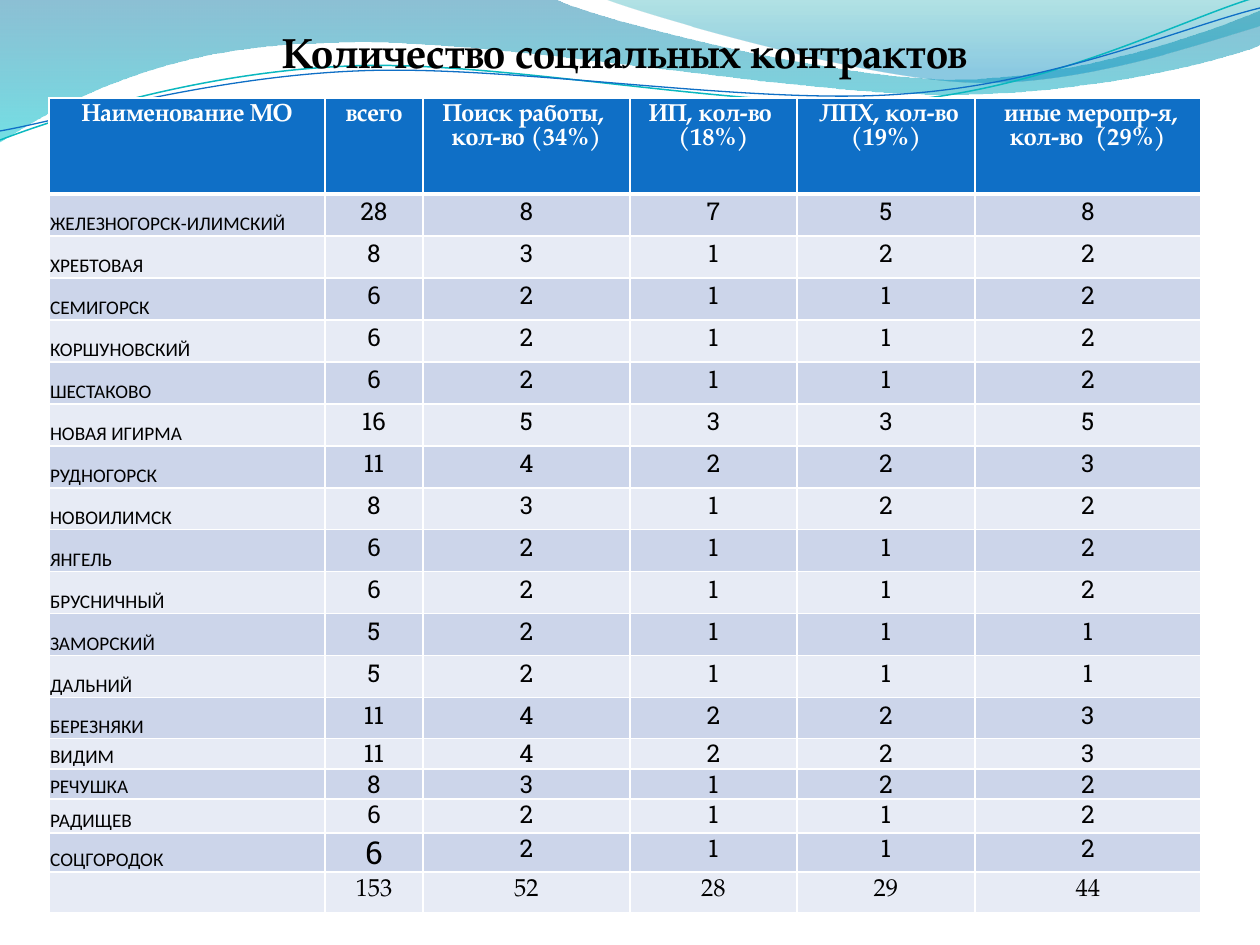
from dataclasses import dataclass, replace

from lxml import etree
from pptx import Presentation
from pptx.dml.color import RGBColor
from pptx.enum.text import MSO_ANCHOR, PP_ALIGN
from pptx.oxml.ns import qn
from pptx.util import Pt

PX = 914400 // 126
TITLE_ONLY = 5
CENTER, LEFT = PP_ALIGN.CENTER, PP_ALIGN.LEFT
TOP, MIDDLE, BOTTOM = MSO_ANCHOR.TOP, MSO_ANCHOR.MIDDLE, MSO_ANCHOR.BOTTOM

SERIF, SLAB, SANS = "TeX Gyre Pagella", "Roboto Slab", "Calibri"
BLACK = RGBColor(0x00, 0x00, 0x00)
WHITE = RGBColor(0xFF, 0xFF, 0xFF)
BLUE = RGBColor(0x0F, 0x6F, 0xC6)
TEAL = RGBColor(0x0A, 0xB8, 0xBF)
BANDS = RGBColor(0xCC, 0xD5, 0xEA), RGBColor(0xE7, 0xEB, 0xF5)

Point = tuple[int, int]


@dataclass(frozen=True)
class Stop:
    position: float
    color: RGBColor
    opacity: int


@dataclass(frozen=True)
class Wave:
    """An outline of pieces: one point is a straight line, three are a Bezier curve."""
    start: Point
    pieces: list[list[Point]]
    stops: tuple[Stop, ...] = ()
    line_color: RGBColor | None = None
    line_width: float = 0


@dataclass(frozen=True)
class CellStyle:
    font: str
    size: int
    color: RGBColor = BLACK
    bold: bool = False
    align: PP_ALIGN = CENTER
    anchor: MSO_ANCHOR = TOP
    tight: bool = True
    spacing: float = 1.0


HEADER = CellStyle(SERIF, 14, WHITE, bold=True, tight=False)
NAME = CellStyle(SANS, 11, align=LEFT, anchor=BOTTOM)
NUMBER = CellStyle(SLAB, 14)
SHORT_ROW_NUMBER = replace(NUMBER, spacing=0.9)
LARGE_NUMBER = replace(SHORT_ROW_NUMBER, size=18)
TOTAL = CellStyle(SERIF, 14, tight=False, spacing=0.95)

WAVES = [
    Wave((0, 0), [[(554, -1)],
                  [(600, 21), (837, 79), (955, 79)],
                  [(1075, 79), (1207, 33), (1260, 11)],
                  [(1261, 45)],
                  [(1239, 55), (1096, 96), (940, 94)],
                  [(784, 94), (481, 35), (324, 43)],
                  [(163, 45), (58, 105), (-1, 142)]],
         (Stop(0, RGBColor(0x00, 0x74, 0xA1), 45), Stop(1, RGBColor(0x00, 0xC6, 0xCF), 55))),
    Wave((604, -1), [[(641, 14), (859, 78), (969, 82)],
                     [(1079, 87), (1211, 40), (1260, 26)],
                     [(1260, 0)]],
         (Stop(0, RGBColor(0x00, 0xA1, 0xA9), 30), Stop(0.8, RGBColor(0x00, 0x8B, 0xBF), 45))),
    Wave((0, 140), [[(60, 117), (199, 72), (349, 66)],
                    [(498, 59), (747, 112), (898, 101)],
                    [(1050, 89), (1182, 19), (1257, -3)]],
         line_color=TEAL, line_width=0.85),
    Wave((0, 131), [[(59, 121), (207, 77), (357, 71)],
                    [(508, 64), (752, 106), (903, 94)],
                    [(1053, 84), (1186, 26), (1260, 8)]],
         line_color=BLUE, line_width=0.75),
]

TITLE = "Количество социальных контрактов "
COLUMN_WIDTHS = [276, 98, 207, 167, 178, 226]
ROW_HEIGHTS = [96] + [42] * 12 + [41, 30, 30, 34, 39, 41]
FIRST_SHORT_ROW = 14
HEADINGS = ["Наименование МО", "всего", "Поиск работы,  кол-во (34%)",
            "ИП, кол-во  (18%)", " ЛПХ, кол-во (19%)", " иные меропр-я, кол-во  (29%)"]
CONTRACTS = [
    ("ЖЕЛЕЗНОГОРСК-ИЛИМСКИЙ", 28, 8, 7, 5, 8),
    ("ХРЕБТОВАЯ", 8, 3, 1, 2, 2),
    ("СЕМИГОРСК", 6, 2, 1, 1, 2),
    ("КОРШУНОВСКИЙ", 6, 2, 1, 1, 2),
    ("ШЕСТАКОВО", 6, 2, 1, 1, 2),
    ("НОВАЯ ИГИРМА", 16, 5, 3, 3, 5),
    ("РУДНОГОРСК", 11, 4, 2, 2, 3),
    ("НОВОИЛИМСК", 8, 3, 1, 2, 2),
    ("ЯНГЕЛЬ", 6, 2, 1, 1, 2),
    ("БРУСНИЧНЫЙ", 6, 2, 1, 1, 2),
    ("ЗАМОРСКИЙ", 5, 2, 1, 1, 1),
    ("ДАЛЬНИЙ", 5, 2, 1, 1, 1),
    ("БЕРЕЗНЯКИ", 11, 4, 2, 2, 3),
    ("ВИДИМ", 11, 4, 2, 2, 3),
    ("РЕЧУШКА", 8, 3, 1, 2, 2),
    ("РАДИЩЕВ", 6, 2, 1, 1, 2),
    ("СОЦГОРОДОК", 6, 2, 1, 1, 2),
    ("", 153, 52, 28, 29, 44),
]


def bend_segments(shape, pieces: list[list[Point]]) -> None:
    """Join the three line segments of each curved piece into one Bezier segment."""
    segments = iter(list(shape.element.iter(qn("a:lnTo"))))
    for piece in pieces:
        first, *others = [next(segments) for _ in piece]
        if others:
            first.tag = qn("a:cubicBezTo")
            for segment in others:
                first.append(segment[0])
                segment.getparent().remove(segment)


def draw_wave(slide, wave: Wave) -> None:
    builder = slide.shapes.build_freeform(wave.start[0] * PX, wave.start[1] * PX)
    builder.add_line_segments([(x * PX, y * PX) for piece in wave.pieces for x, y in piece],
                              close=bool(wave.stops))
    shape = builder.convert_to_shape()
    bend_segments(shape, wave.pieces)
    shape.shadow.inherit = False
    if wave.stops:
        shape.line.fill.background()
        shape.fill.gradient()
        shape.fill.gradient_angle = 270
        for gradient_stop, stop in zip(shape.fill.gradient_stops, wave.stops):
            gradient_stop.position = stop.position
            gradient_stop.color.rgb = stop.color
        for color, stop in zip(shape.element.iter(qn("a:srgbClr")), wave.stops):
            etree.SubElement(color, qn("a:alpha"), val=str(stop.opacity * 1000))
    else:
        shape.fill.background()
        shape.line.color.rgb = wave.line_color
        shape.line.width = Pt(wave.line_width)


def format_paragraph(paragraph, style: CellStyle) -> None:
    paragraph.alignment = style.align
    paragraph.line_spacing = style.spacing
    font = paragraph.font
    font.name, font.size, font.bold = style.font, Pt(style.size), style.bold
    font.color.rgb = style.color


def add_title(slide) -> None:
    title = slide.shapes.title
    slide.shapes.element.append(title.element)  # in front of the waves
    title.left, title.top, title.width, title.height = 59 * PX, 20 * PX, 1142 * PX, 63 * PX
    title.text_frame.text = TITLE
    title.text_frame.vertical_anchor = MIDDLE
    format_paragraph(title.text_frame.paragraphs[0], CellStyle(SERIF, 24, bold=True))


def set_borders(cell, widths: dict[str, int]) -> None:
    properties = cell._tc.get_or_add_tcPr()
    for index, (side, width) in enumerate(widths.items()):
        line = etree.Element(qn(f"a:ln{side}"), w=str(Pt(width)))
        fill = etree.SubElement(line, qn("a:solidFill"))
        etree.SubElement(fill, qn("a:srgbClr"), val=str(WHITE))
        properties.insert(index, line)


def fill_cell(cell, text: str, style: CellStyle, background: RGBColor) -> None:
    cell.text = text
    cell.vertical_anchor = style.anchor
    if style.tight:
        cell.margin_left = cell.margin_right = cell.margin_top = PX
        cell.margin_bottom = 0
    format_paragraph(cell.text_frame.paragraphs[0], style)
    cell.fill.solid()
    cell.fill.fore_color.rgb = background


def cell_style(row: int, column: int) -> CellStyle:
    if row == 0:
        return HEADER
    if column == 0:
        return NAME
    if row == len(CONTRACTS):
        return TOTAL
    if (row, column) == (len(CONTRACTS) - 1, 1):
        return LARGE_NUMBER
    return SHORT_ROW_NUMBER if row >= FIRST_SHORT_ROW else NUMBER


def add_contract_table(slide) -> None:
    rows = [HEADINGS, *CONTRACTS]
    table = slide.shapes.add_table(len(rows), len(HEADINGS), 49 * PX, 98 * PX,
                                   sum(COLUMN_WIDTHS) * PX, sum(ROW_HEIGHTS) * PX).table
    table.horz_banding = False
    for column, width in zip(table.columns, COLUMN_WIDTHS):
        column.width = width * PX
    for row, height in zip(table.rows, ROW_HEIGHTS):
        row.height = height * PX
    for r, values in enumerate(rows):
        background = BANDS[(r - 1) % 2] if r else BLUE
        for c, value in enumerate(values):
            fill_cell(table.cell(r, c), str(value), cell_style(r, c), background)
            set_borders(table.cell(r, c), {"L": 1, "R": 1, "T": 3 if r == 1 else 1, "B": 1 if r else 3})


def main() -> None:
    presentation = Presentation()
    presentation.slide_width, presentation.slide_height = 1260 * PX, 945 * PX
    slide = presentation.slides.add_slide(presentation.slide_layouts[TITLE_ONLY])
    for wave in WAVES:
        draw_wave(slide, wave)
    add_title(slide)
    add_contract_table(slide)
    presentation.save("out.pptx")


if __name__ == "__main__":
    main()
